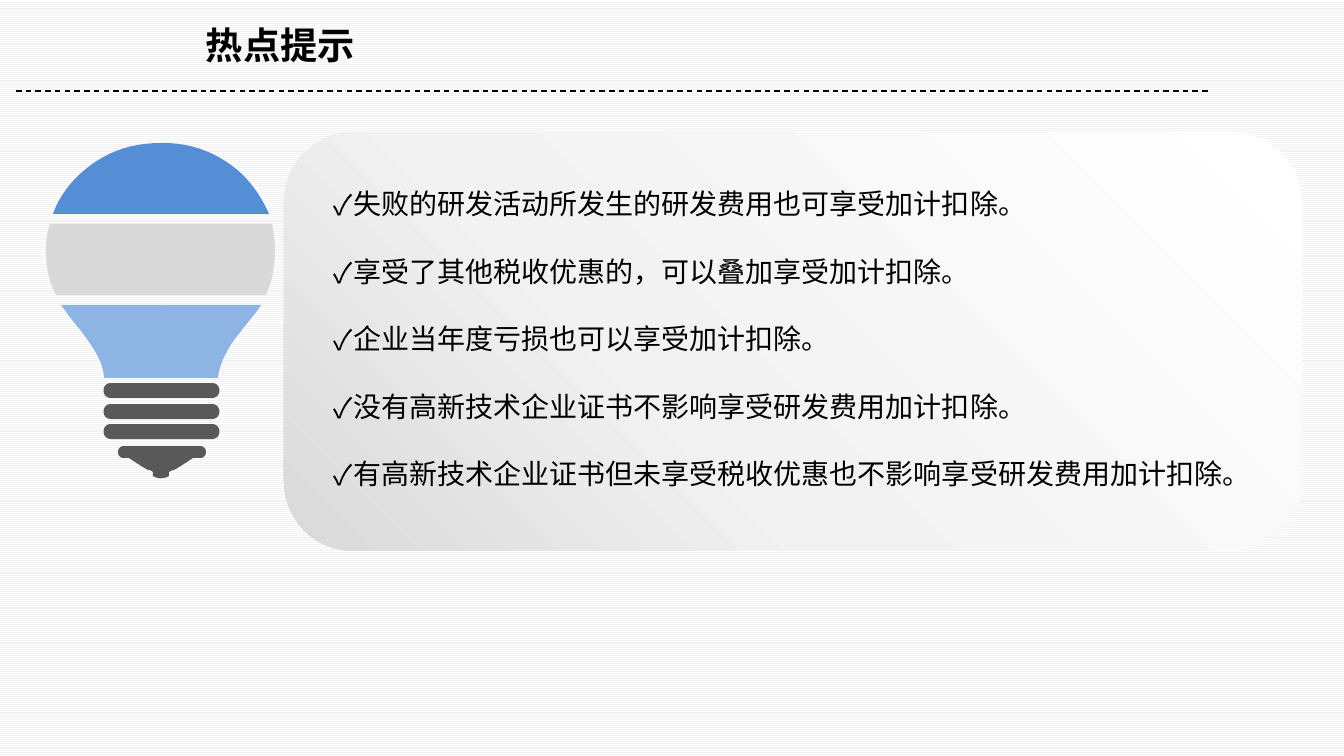
"""Build the hot-tips slide: a light bulb beside a panel of check-marked tips."""
from copy import deepcopy

from pptx import Presentation
from pptx import util as u
from pptx.dml.color import RGBColor
from pptx.enum import dml, shapes
from pptx.oxml.ns import qn

PX = 9071
FONT = "Noto Sans CJK SC"
TIPS = [
    "失败的研发活动所发生的研发费用也可享受加计扣除。",
    "享受了其他税收优惠的，可以叠加享受加计扣除。",
    "企业当年度亏损也可以享受加计扣除。",
    "没有高新技术企业证书不影响享受研发费用加计扣除。",
    "有高新技术企业证书但未享受税收优惠也不影响享受研发费用加计扣除。",
]


def colour(code):
    return RGBColor.from_string(code)


def write(paragraph, words, size, bold=False, bullet=None, before=0):
    if bullet:
        props = paragraph._p.get_or_add_pPr()
        props.set("marL", "0")
        props.set("indent", "0")
        props.append(props.makeelement(qn("a:buFont"), {"typeface": FONT}))
        props.append(props.makeelement(qn("a:buChar"), {"char": bullet}))
    if before:
        paragraph.space_before = u.Pt(before)
    run = paragraph.add_run()
    run.text = words
    run.font.size = u.Pt(size)
    run.font.bold = bold
    run.font.name = FONT
    run.font.color.rgb = colour("000000")
    east_asian = run._r.rPr.makeelement(qn("a:ea"), {"typeface": FONT})
    run._r.rPr.find(qn("a:latin")).addnext(east_asian)


deck = Presentation()
deck.slide_width, deck.slide_height = 1344 * PX, 756 * PX
slide = deck.slides.add_slide(deck.slide_layouts[6])

backdrop = slide.background.fill
backdrop.patterned()
backdrop.pattern = dml.MSO_PATTERN.NARROW_HORIZONTAL
backdrop.fore_color.rgb = colour("F2F2F2")
backdrop.back_color.rgb = colour("FFFFFF")

panel = slide.shapes.add_shape(
    shapes.MSO_SHAPE.ROUNDED_RECTANGLE, 284 * PX, 132 * PX, 1018 * PX, 419 * PX)
panel.shadow.inherit = False
panel.line.fill.background()
panel.fill.gradient()
panel.fill.gradient_angle = 225
first_stop = next(panel._element.iter(qn("a:gs")))
first_stop.addnext(deepcopy(first_stop))
shades = [(0, "FFFFFF"), (0.62, "F2F2F2"), (1, "D9D9D9")]
for stop, (position, code) in zip(panel.fill.gradient_stops, shades):
    stop.position = position
    stop.color.rgb = colour(code)

divider = slide.shapes.add_connector(
    shapes.MSO_CONNECTOR.STRAIGHT, 16 * PX, 91 * PX, 1209 * PX, 91 * PX)
divider.line.color.rgb = colour("000000")
divider.line.width = u.Pt(1)
divider.line.dash_style = dml.MSO_LINE.DASH
divider._element.spPr.append(divider._element.makeelement(qn("a:effectLst"), {}))

heading = slide.shapes.add_textbox(196 * PX, 17 * PX, 174 * PX, 55 * PX)
heading.text_frame.word_wrap = False
write(heading.text_frame.paragraphs[0], "热点提示", 26.6, bold=True)

# Each outline lists points; six numbers make a cubic curve.
SEAM = 163
BLUE, GREY, PALE, DARK = "558ED5", "D9D9D9", "8EB4E3", "595959"
coil_left, coil_right = [
    [[(SEAM, top), (SEAM, top + 15), (side, top + 15),
      (tip, top + 15, tip, top, side, top)] for top in (383, 404, 424)]
    for side, tip in ((111, 101), (212, 222))]
bulb_parts = [
    (BLUE, [[(242, 174), (254, 186, 263, 200, 269, 214), (SEAM, 214), (SEAM, 143),
             (194, 143, 220, 154, 242, 174)]]),
    (DARK, [[(200, 446), (208, 446, 208, 458, 200, 458), (193, 458),
             (187, 462, 181, 466, 174, 470), (172, 470, 171, 471, 169, 472),
             (169, 476), (164, 479, 158, 479, 153, 476), (153, 472),
             (152, 471, 150, 470, 148, 470), (141, 466, 135, 462, 129, 458),
             (124, 458), (116, 458, 116, 446, 124, 446)]]),
    (DARK, coil_left),
    (DARK, coil_right),
    (BLUE, [[(161, 143), (SEAM, 143), (SEAM, 214), (53, 214),
             (58, 200, 67, 186, 80, 174), (103, 153, 129, 143, 161, 143)]]),
    (GREY, [[(SEAM, 295), (SEAM, 224), (272, 224), (274, 232, 275, 242, 275, 251),
             (275, 267, 272, 282, 266, 295)]]),
    (GREY, [[(SEAM, 295), (56, 295), (49, 282, 46, 267, 46, 251),
             (46, 242, 47, 232, 50, 224), (SEAM, 224)]]),
    (PALE, [[(SEAM, 305), (SEAM, 378), (104, 378), (104, 363, 93, 345, 73, 321),
             (68, 315, 65, 310, 61, 305)]]),
    (PALE, [[(SEAM, 305), (261, 305), (258, 310, 254, 315, 249, 321),
             (242, 330, 237, 336, 232, 343), (223, 357, 219, 368, 218, 378),
             (SEAM, 378)]]),
]
STEPS = 12
bulb = slide.shapes.add_group_shape()
for code, outlines in bulb_parts:
    builder = None
    for start, *segments in outlines:
        points = [start]
        for segment in segments:
            if len(segment) == 2:
                points.append(segment)
                continue
            corners = [points[-1], segment[:2], segment[2:4], segment[4:]]
            for step in range(1, STEPS + 1):
                t = step / STEPS
                weights = ((1 - t) ** 3, 3 * t * (1 - t) ** 2, 3 * t * t * (1 - t), t ** 3)
                points.append(tuple(
                    sum(w * corner[axis] for w, corner in zip(weights, corners))
                    for axis in (0, 1)))
        trail = [(round(x * PX), round(y * PX)) for x, y in points]
        if builder is None:
            builder = bulb.shapes.build_freeform(*trail[0])
        else:
            builder.move_to(*trail[0])
        builder.add_line_segments(trail[1:], close=True)
    part = builder.convert_to_shape()
    part.shadow.inherit = False
    part.fill.solid()
    part.fill.fore_color.rgb = colour(code)
    part.line.fill.background()

tips = slide.shapes.add_textbox(324 * PX, 182 * PX, 979 * PX, 407 * PX).text_frame
tips.word_wrap = True
for index, tip in enumerate(TIPS):
    paragraph = tips.add_paragraph() if index else tips.paragraphs[0]
    write(paragraph, tip, 20, bullet="✓", before=24.1 if index else 0)

deck.save("out.pptx")
